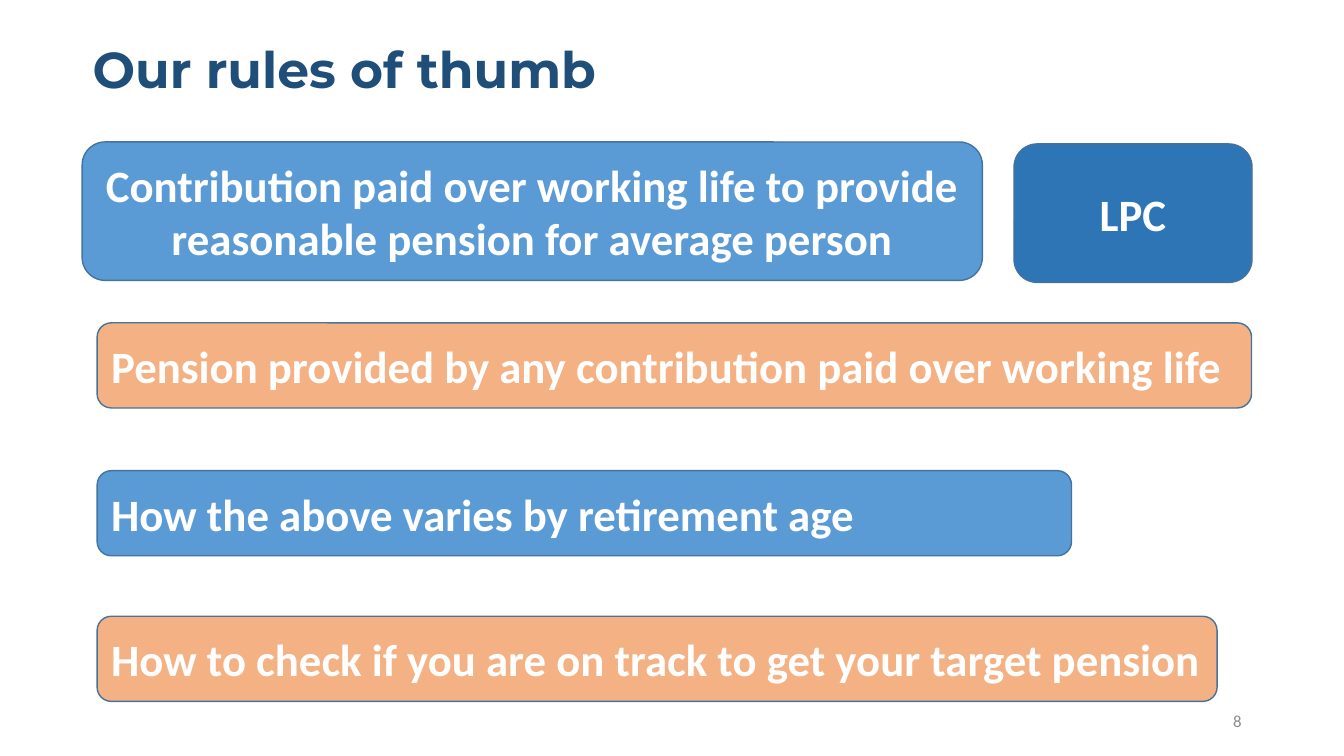
"""Build the slide listing the pension rules of thumb."""
from dataclasses import dataclass

import pptx
import pptx.dml.color
import pptx.enum.shapes
import pptx.enum.text
import pptx.util

Pt = pptx.util.Pt
Align = pptx.enum.text.PP_ALIGN
Anchor = pptx.enum.text.MSO_ANCHOR


@dataclass(frozen=True)
class Theme:
    title_font: str = "Montserrat"
    body_font: str = "Calibri"
    title_size: float = 36
    rule_size: float = 32
    number_size: float = 12
    navy: str = "1F4E79"
    blue: str = "5B9BD5"
    dark_blue: str = "2E75B6"
    orange: str = "F4B183"
    outline: str = "43739E"
    white: str = "FFFFFF"
    grey: str = "8C8C8C"


@dataclass(frozen=True)
class Area:
    left: float
    top: float
    width: float
    height: float

    def lengths(self) -> tuple:
        return Pt(self.left), Pt(self.top), Pt(self.width), Pt(self.height)


@dataclass(frozen=True)
class Rule:
    text: str
    area: Area
    fill: str
    align: Align = Align.LEFT


THEME = Theme()
RULE_LEFT = 69.4
RULE_HEIGHT = 60.8
RULES = [
    Rule("Contribution paid over working life to provide reasonable pension for average person",
         Area(58.7, 101.4, 643, 98.9), THEME.blue, Align.CENTER),
    Rule("LPC", Area(724.3, 102.8, 170, 98.9), THEME.dark_blue, Align.CENTER),
    Rule("Pension provided by any contribution paid over working life",
         Area(RULE_LEFT, 230.6, 824.6, RULE_HEIGHT), THEME.orange),
    Rule("How the above varies by retirement age",
         Area(RULE_LEFT, 336.2, 696, RULE_HEIGHT), THEME.blue),
    Rule("How to check if you are on track to get your target pension",
         Area(RULE_LEFT, 440.2, 800, RULE_HEIGHT), THEME.orange),
]


def rgb(code: str) -> pptx.dml.color.RGBColor:
    return pptx.dml.color.RGBColor.from_string(code)


def write(shape, text: str, font: str, size: float, color: str, bold: bool,
          align: Align, anchor: Anchor = Anchor.MIDDLE) -> None:
    frame = shape.text_frame
    frame.text = text
    frame.word_wrap = True
    frame.auto_size = pptx.enum.text.MSO_AUTO_SIZE.NONE
    frame.vertical_anchor = anchor
    para = frame.paragraphs[0]
    para.alignment = align
    for span in para.runs:
        span.font.name = font
        span.font.size = Pt(size)
        span.font.bold = bold
        span.font.color.rgb = rgb(color)


def add_title(page, text: str, area: Area) -> None:
    title = page.shapes.title
    title.left, title.top, title.width, title.height = area.lengths()
    write(title, text, THEME.title_font, THEME.title_size, THEME.navy, True,
          Align.LEFT, Anchor.TOP)
    title.text_frame.paragraphs[0].line_spacing = 0.9


def add_page_number(page, text: str, area: Area) -> None:
    box = page.shapes.add_textbox(*area.lengths())
    write(box, text, THEME.body_font, THEME.number_size, THEME.grey, False, Align.RIGHT)


def add_rule(page, rule: Rule) -> None:
    box = page.shapes.add_shape(
        pptx.enum.shapes.MSO_SHAPE.ROUNDED_RECTANGLE, *rule.area.lengths())
    box.shadow.inherit = False
    box.fill.solid()
    box.fill.fore_color.rgb = rgb(rule.fill)
    box.line.color.rgb = rgb(THEME.outline)
    box.line.width = Pt(1)
    write(box, rule.text, THEME.body_font, THEME.rule_size, THEME.white, True, rule.align)


def main() -> None:
    deck = pptx.Presentation()
    deck.slide_width, deck.slide_height = Pt(960), Pt(540)
    page = deck.slides.add_slide(deck.slide_layouts.get_by_name("Title Only"))
    add_title(page, "Our rules of thumb", Area(59, 28.8, 835, 86.4))
    add_page_number(page, "8", Area(678, 500.5, 216, 28.8))
    for rule in RULES:
        add_rule(page, rule)
    deck.save("out.pptx")


if __name__ == "__main__":
    main()
